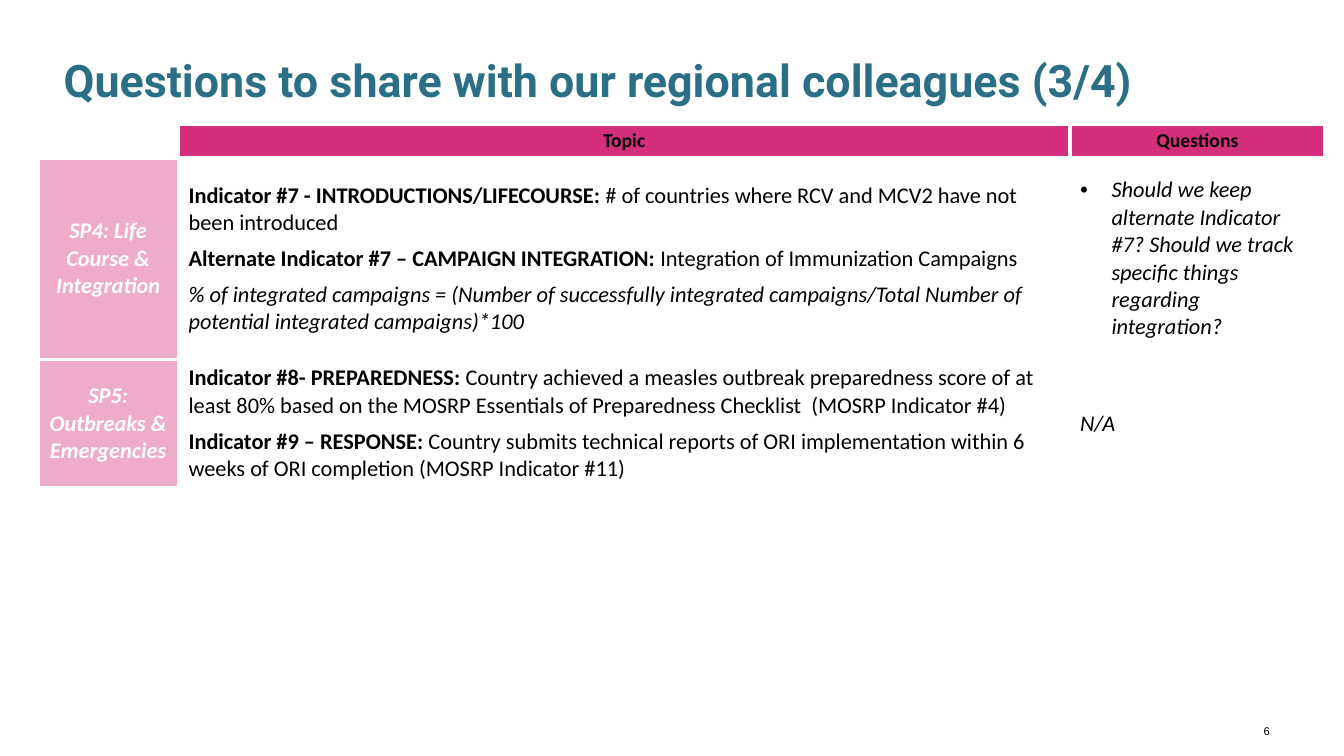
from dataclasses import dataclass

from lxml import etree
from pptx import Presentation
from pptx.dml.color import RGBColor
from pptx.enum.text import MSO_ANCHOR, MSO_AUTO_SIZE, PP_ALIGN
from pptx.oxml.ns import qn
from pptx.util import Pt

PX = 9525  # 96 px to the inch
TITLE_ONLY = 5
LEFT, CENTER, RIGHT = PP_ALIGN.LEFT, PP_ALIGN.CENTER, PP_ALIGN.RIGHT
MIDDLE, BOTTOM = MSO_ANCHOR.MIDDLE, MSO_ANCHOR.BOTTOM
NO_AUTOFIT = MSO_AUTO_SIZE.NONE

BLACK = RGBColor(0x00, 0x00, 0x00)
WHITE = RGBColor(0xFF, 0xFF, 0xFF)
MAGENTA = RGBColor(0xD4, 0x2F, 0x7B)
PINK = RGBColor(0xEE, 0xAC, 0xCA)
TEAL = RGBColor(0x2B, 0x6F, 0x86)

COLUMN_WIDTHS = (134, 849, 243)
ROW_HEIGHTS = (32, 192, 122)


@dataclass
class CellStyle:
    size: int = 16
    color: RGBColor = BLACK
    fill: RGBColor = None
    align: PP_ALIGN = LEFT
    bold: bool = False
    italic: bool = False
    space_after: int = 0
    bullet: bool = False


HEADER = CellStyle(size=14, fill=MAGENTA, align=CENTER, bold=True)
PRIORITY = CellStyle(color=WHITE, fill=PINK, align=CENTER, bold=True, italic=True)
TOPIC = CellStyle(space_after=6)
FORMULA = CellStyle(italic=True, space_after=6)
ANSWER = CellStyle(italic=True)
QUESTION = CellStyle(italic=True, bullet=True)

# Each cell is a list of (style, bold lead, remaining text)
ROWS = [
    [
        [],
        [(HEADER, "", "Topic")],
        [(HEADER, "", "Questions")],
    ],
    [
        [(PRIORITY, "", "SP4: Life Course & Integration")],
        [
            (TOPIC, "Indicator #7 - INTRODUCTIONS/LIFECOURSE: ",
             "# of countries where RCV and MCV2 have not been introduced"),
            (TOPIC, "Alternate Indicator #7 – CAMPAIGN INTEGRATION: ",
             "Integration of Immunization Campaigns"),
            (FORMULA, "", "% of integrated campaigns = (Number of successfully integrated "
             "campaigns/Total Number of potential integrated campaigns)*100"),
        ],
        [(QUESTION, "", "Should we keep alternate Indicator #7? Should we track "
          "specific things regarding integration? ")],
    ],
    [
        [(PRIORITY, "", "SP5: Outbreaks & Emergencies")],
        [
            (TOPIC, "Indicator #8- PREPAREDNESS: ",
             "Country achieved a measles outbreak preparedness score of at least 80% based on "
             "the MOSRP Essentials of Preparedness Checklist  (MOSRP Indicator #4)"),
            (TOPIC, "Indicator #9 – RESPONSE: ",
             "Country submits technical reports of ORI implementation within 6 weeks of "
             "ORI completion (MOSRP Indicator #11)"),
        ],
        [(ANSWER, "", "N/A")],
    ],
]


def px(*lengths):
    return [length * PX for length in lengths]


def format_font(font, name, size, color, bold=False, italic=False):
    font.name, font.size = name, Pt(size)
    font.bold, font.italic = bold, italic
    font.color.rgb = color


def add_bullet(paragraph, indent):
    properties = paragraph._p.get_or_add_pPr()
    properties.set("marL", str(indent * PX))
    properties.set("indent", str(-indent * PX))
    etree.SubElement(properties, qn("a:buFont"), typeface="Arial")
    etree.SubElement(properties, qn("a:buChar"), char="•")


def write_paragraph(paragraph, style, lead, rest):
    if style.bullet:
        add_bullet(paragraph, 30)
    paragraph.alignment = style.align
    paragraph.space_after = Pt(style.space_after)
    for text, bold in ((lead, True), (rest, style.bold)):
        if text:
            run = paragraph.add_run()
            run.text = text
            format_font(run.font, "Calibri", style.size, style.color, bold, style.italic)


def add_borders(cell, color, width):
    properties = cell._tc.get_or_add_tcPr()
    for position, side in enumerate(("lnL", "lnR", "lnT", "lnB")):
        line = etree.Element(qn(f"a:{side}"), w=str(Pt(width)))
        fill = etree.SubElement(line, qn("a:solidFill"))
        etree.SubElement(fill, qn("a:srgbClr"), val=str(color))
        properties.insert(position, line)


def fill_cell(cell, content):
    cell.vertical_anchor = MIDDLE
    cell.fill.background()
    if not content:
        cell.margin_top = cell.margin_bottom = 0  # keeps the header row low
    for index, (style, lead, rest) in enumerate(content):
        frame = cell.text_frame
        paragraph = frame.add_paragraph() if index else frame.paragraphs[0]
        write_paragraph(paragraph, style, lead, rest)
        if style.fill is not None:
            cell.fill.solid()
            cell.fill.fore_color.rgb = style.fill
    add_borders(cell, WHITE, 3)


def add_indicator_table(slide):
    frame = slide.shapes.add_table(
        len(ROWS), len(COLUMN_WIDTHS),
        *px(36, 118, sum(COLUMN_WIDTHS), sum(ROW_HEIGHTS)))
    table = frame.table
    table.first_row = table.horz_banding = False
    for column, width in zip(table.columns, COLUMN_WIDTHS):
        column.width = width * PX
    for row, height, contents in zip(table.rows, ROW_HEIGHTS, ROWS):
        row.height = height * PX
        for cell, content in zip(row.cells, contents):
            fill_cell(cell, content)


def set_title(slide, text):
    title = slide.shapes.title
    title.left, title.top, title.width, title.height = px(51, 68, 1166, 39)
    frame = title.text_frame
    frame.text = text
    frame.auto_size = NO_AUTOFIT
    frame.vertical_anchor = BOTTOM
    paragraph = frame.paragraphs[0]
    paragraph.alignment = LEFT
    paragraph.line_spacing = 0.9
    format_font(paragraph.runs[0].font, "Roboto", 32, TEAL, bold=True)


def add_page_number(slide, number):
    frame = slide.shapes.add_textbox(*px(1192, 685, 27, 22)).text_frame
    frame.word_wrap = True
    frame.vertical_anchor = MIDDLE
    frame.text = number
    paragraph = frame.paragraphs[0]
    paragraph.alignment = RIGHT
    format_font(paragraph.runs[0].font, "Arial", 8, BLACK)


def main():
    presentation = Presentation()
    presentation.slide_width, presentation.slide_height = px(1280, 720)
    slide = presentation.slides.add_slide(presentation.slide_layouts[TITLE_ONLY])
    add_indicator_table(slide)
    add_page_number(slide, "6")
    set_title(slide, "Questions to share with our regional colleagues (3/4)")
    presentation.save("out.pptx")


if __name__ == "__main__":
    main()
